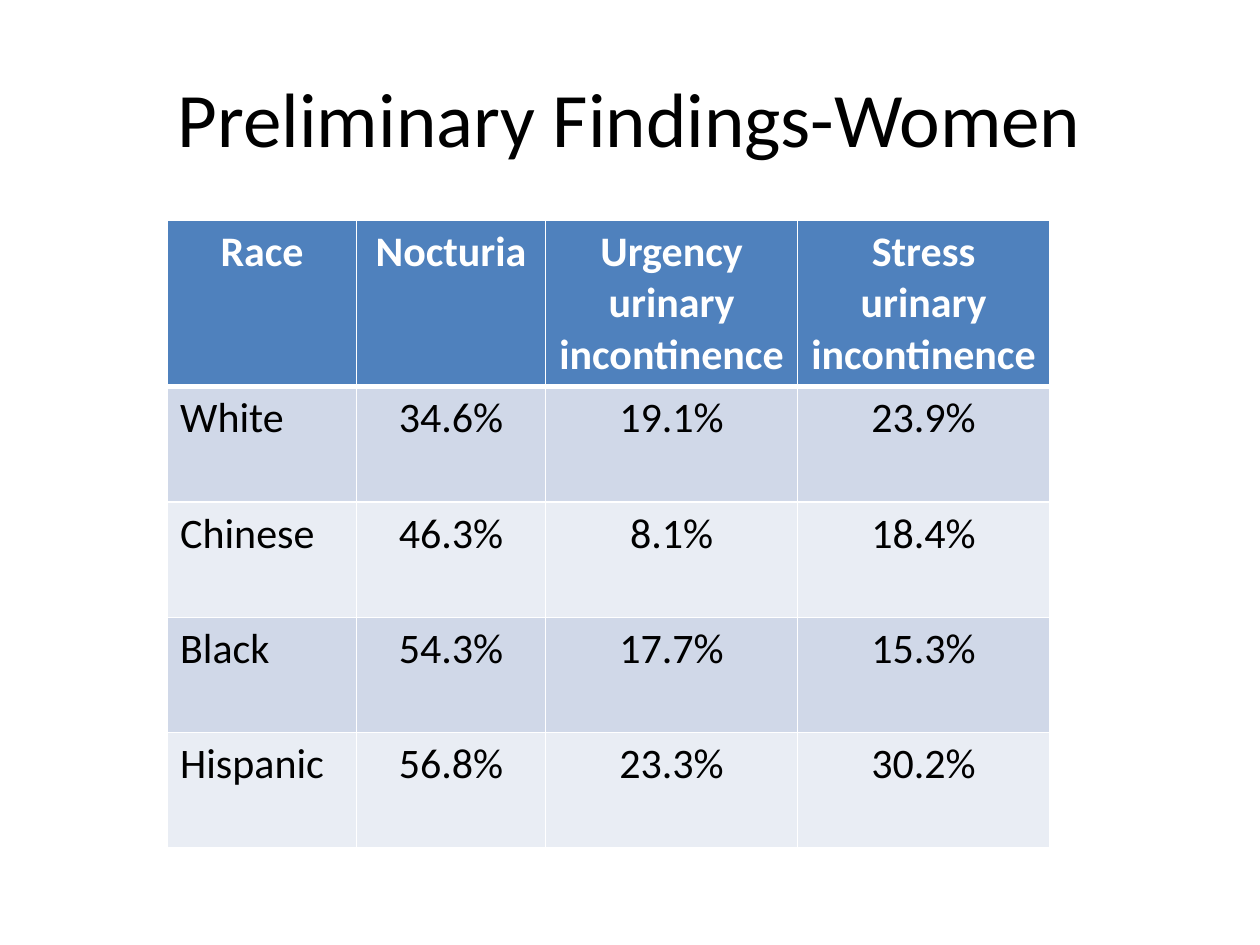
from lxml import etree
from pptx import Presentation
from pptx.dml.color import RGBColor
from pptx.enum.text import MSO_ANCHOR, PP_ALIGN
from pptx.oxml.ns import qn
from pptx.util import Inches, Pt

CENTER, LEFT = PP_ALIGN.CENTER, PP_ALIGN.LEFT
MIDDLE = MSO_ANCHOR.MIDDLE

BLACK = RGBColor(0x00, 0x00, 0x00)
WHITE = RGBColor(0xFF, 0xFF, 0xFF)
HEADER_BLUE = RGBColor(0x4F, 0x81, 0xBD)
BANDS = (RGBColor(0xD0, 0xD8, 0xE8), RGBColor(0xE9, 0xED, 0xF4))
FONT = "Calibri"

TITLE = "Preliminary Findings-Women"
ROWS = [
    ("Race", "Nocturia", "Urgency urinary incontinence", "Stress urinary incontinence"),
    ("White", "34.6%", "19.1%", "23.9%"),
    ("Chinese", "46.3%", "8.1%", "18.4%"),
    ("Black", "54.3%", "17.7%", "15.3%"),
    ("Hispanic", "56.8%", "23.3%", "30.2%"),
]
COL_WIDTHS = (1.5, 1.5, 2, 2)
ROW_HEIGHTS = [1.32] + [0.915] * (len(ROWS) - 1)


def write(tf, text, size, color, align, bold=False):
    tf.text = text
    p = tf.paragraphs[0]
    p.alignment = align
    font = p.runs[0].font
    font.name, font.size, font.bold = FONT, Pt(size), bold
    font.color.rgb = color


def set_borders(cell, bottom):
    """Draw white cell borders, 1 pt except for the given top-to-bottom edge width."""
    tc_pr = cell._tc.get_or_add_tcPr()
    widths = {"a:lnL": 1, "a:lnR": 1, "a:lnT": 1, "a:lnB": bottom}
    for i, (tag, width) in enumerate(widths.items()):
        ln = etree.Element(qn(tag), w=str(Pt(width)))
        fill = etree.SubElement(ln, qn("a:solidFill"))
        etree.SubElement(fill, qn("a:srgbClr"), val=str(WHITE))
        tc_pr.insert(i, ln)


prs = Presentation()
prs.slide_width, prs.slide_height = Inches(10), Inches(7.5)
s = prs.slides.add_slide(prs.slide_layouts[6])

title = s.shapes.add_textbox(Inches(0.5), Inches(0.3), Inches(9), Inches(1.25))
title.text_frame.word_wrap = True
title.text_frame.vertical_anchor = MIDDLE
write(title.text_frame, TITLE, 44, BLACK, CENTER)

table = s.shapes.add_table(
    len(ROWS), len(COL_WIDTHS), Inches(1.33), Inches(1.75),
    Inches(sum(COL_WIDTHS)), Inches(sum(ROW_HEIGHTS))).table
for column, width in zip(table.columns, COL_WIDTHS):
    column.width = Inches(width)
for row, height in zip(table.rows, ROW_HEIGHTS):
    row.height = Inches(height)

for r, values in enumerate(ROWS):
    header = r == 0
    for c, value in enumerate(values):
        cell = table.cell(r, c)
        cell.fill.solid()
        cell.fill.fore_color.rgb = HEADER_BLUE if header else BANDS[(r - 1) % 2]
        set_borders(cell, bottom=3 if header else 1)
        if r == 1:
            cell._tc.tcPr.find(qn("a:lnT")).set("w", str(Pt(3)))
        write(cell.text_frame, value, 24, WHITE if header else BLACK,
              CENTER if header or c else LEFT, bold=header)

prs.save("out.pptx")
